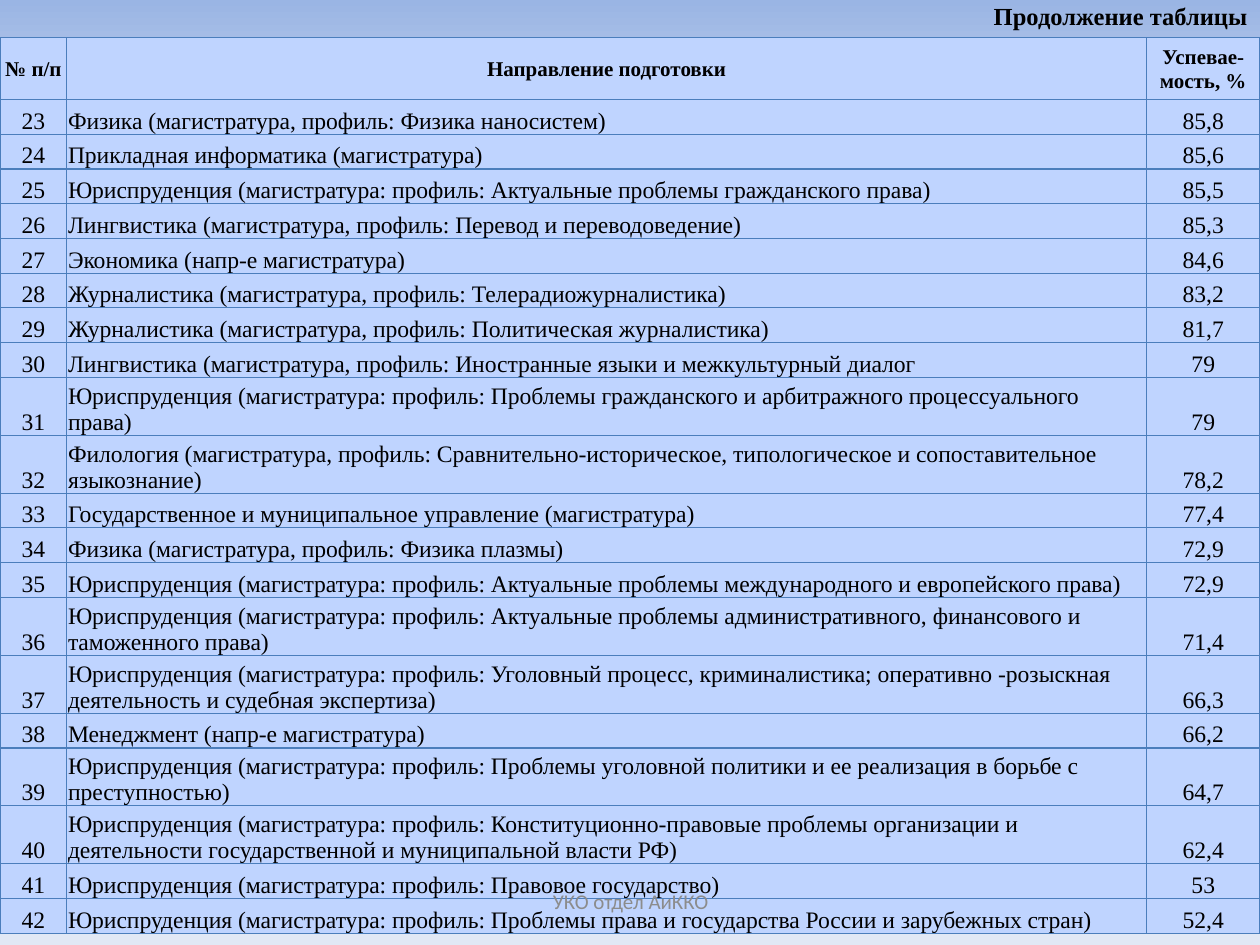
import copy

import lxml.etree
import pptx
import pptx.dml.color
import pptx.enum.text
import pptx.oxml.ns
import pptx.util

Inches = pptx.util.Inches
Pt = pptx.util.Pt
RGBColor = pptx.dml.color.RGBColor
Align = pptx.enum.text.PP_ALIGN
Anchor = pptx.enum.text.MSO_ANCHOR
qn = pptx.oxml.ns.qn

BLACK = RGBColor(0x00, 0x00, 0x00)
GREY = RGBColor(0x8C, 0x8C, 0x8C)
CELL_FILL = RGBColor(0xBF, 0xD4, 0xFF)
BORDER = RGBColor(0x4B, 0x7E, 0xBC)
BACKGROUND_STOPS = [
    (0, RGBColor(0x9A, 0xB5, 0xE4)),
    (0.13, RGBColor(0xC2, 0xD1, 0xED)),
    (1, RGBColor(0xE1, 0xE8, 0xF5)),
]

TITLE = {"name": "Times New Roman", "size": Pt(14), "bold": True}
HEADER = {"name": "Times New Roman", "size": Pt(12), "bold": True}
BODY = {"name": "Times New Roman", "size": Pt(13.5), "bold": False}
FOOTER = {"name": "Calibri", "size": Pt(12), "bold": False}

HEADINGS = ("№ п/п", "Направление подготовки", "Успевае-мость, %")
FIRST_NUMBER = 23
PROGRAMMES = [
    ("Физика (магистратура, профиль: Физика наносистем)", "85,8"),
    ("Прикладная информатика (магистратура)", "85,6"),
    ("Юриспруденция (магистратура: профиль: Актуальные проблемы гражданского права)", "85,5"),
    ("Лингвистика (магистратура, профиль: Перевод и переводоведение)", "85,3"),
    ("Экономика (напр-е магистратура)", "84,6"),
    ("Журналистика (магистратура, профиль: Телерадиожурналистика)", "83,2"),
    ("Журналистика (магистратура, профиль: Политическая журналистика)", "81,7"),
    ("Лингвистика (магистратура, профиль: Иностранные языки и межкультурный диалог", "79"),
    ("Юриспруденция (магистратура: профиль: Проблемы гражданского и арбитражного "
     "процессуального права)", "79"),
    ("Филология (магистратура, профиль: Сравнительно-историческое, типологическое и "
     "сопоставительное языкознание)", "78,2"),
    ("Государственное и муниципальное управление (магистратура)", "77,4"),
    ("Физика (магистратура, профиль: Физика плазмы)", "72,9"),
    ("Юриспруденция (магистратура: профиль: Актуальные проблемы международного и "
     "европейского права)", "72,9"),
    ("Юриспруденция (магистратура: профиль: Актуальные проблемы административного, "
     "финансового и таможенного права)", "71,4"),
    ("Юриспруденция (магистратура: профиль: Уголовный процесс, криминалистика; "
     "оперативно -розыскная деятельность и судебная экспертиза)", "66,3"),
    ("Менеджмент (напр-е магистратура)", "66,2"),
    ("Юриспруденция (магистратура: профиль: Проблемы уголовной политики и ее "
     "реализация в борьбе с преступностью)", "64,7"),
    ("Юриспруденция (магистратура: профиль: Конституционно-правовые проблемы "
     "организации и деятельности государственной и муниципальной власти РФ)", "62,4"),
    ("Юриспруденция (магистратура: профиль: Правовое государство)", "53"),
    ("Юриспруденция (магистратура: профиль: Проблемы права и государства России и "
     "зарубежных стран)", "52,4"),
]
TWO_LINE_NUMBERS = {31, 32, 36, 37, 39, 40}


def write_text(tf, text, font_format, color, alignment):
    p = tf.paragraphs[0]
    p.alignment = alignment
    r = p.add_run()
    r.text = text
    for name, value in font_format.items():
        setattr(r.font, name, value)
    r.font.color.rgb = color


def add_borders(cell):
    tc_pr = cell._tc.get_or_add_tcPr()
    for i, side in enumerate(("lnL", "lnR", "lnT", "lnB")):
        ln = lxml.etree.Element(qn(f"a:{side}"), w=str(Pt(0.75)))
        fill = lxml.etree.SubElement(ln, qn("a:solidFill"))
        lxml.etree.SubElement(fill, qn("a:srgbClr"), val=str(BORDER))
        tc_pr.insert(i, ln)  # borders must come before the cell fill


prs = pptx.Presentation()
prs.slide_width = Inches(10)
prs.slide_height = Inches(7.5)
s = prs.slides.add_slide(prs.slide_layouts[6])

# Background gradient, top to bottom
fill = s.background.fill
fill.gradient()
fill.gradient_angle = 270
stop_list = s._element.find(".//" + qn("a:gsLst"))
stop_list.append(copy.deepcopy(stop_list[-1]))
for stop, (position, color) in zip(fill.gradient_stops, BACKGROUND_STOPS):
    stop.position = position
    stop.color.rgb = color

# Title
title = s.shapes.add_textbox(Inches(0.2), Inches(-0.04), Inches(9.8), Inches(0.34))
title.text_frame.word_wrap = True
write_text(title.text_frame, "Продолжение таблицы", TITLE, BLACK, Align.RIGHT)

# Table: one-line rows share the height left by the header and two-line rows
rows = [HEADINGS] + [
    (str(number), *programme) for number, programme in enumerate(PROGRAMMES, FIRST_NUMBER)
]
table_height = Inches(7.11)
header_height = Inches(0.49)
two_line_height = Inches(0.46)
one_line_count = len(PROGRAMMES) - len(TWO_LINE_NUMBERS)
one_line_height = (
    table_height - header_height - two_line_height * len(TWO_LINE_NUMBERS)
) // one_line_count

table = s.shapes.add_table(
    len(rows), len(HEADINGS), 0, Inches(0.3), Inches(10), table_height
).table
for column, width in zip(table.columns, (0.53, 8.57, 0.9)):
    column.width = Inches(width)

for i, row in enumerate(rows):
    is_header = i == 0
    if is_header:
        height = header_height
    elif int(row[0]) in TWO_LINE_NUMBERS:
        height = two_line_height
    else:
        height = one_line_height
    table.rows[i].height = height

    cell_format = {
        "margin_left": Inches(0.01),
        "margin_right": Inches(0.01),
        "margin_top": Inches(0.01),
        "margin_bottom": 0,
        "vertical_anchor": Anchor.MIDDLE if is_header else Anchor.BOTTOM,
    }
    for j, text in enumerate(row):
        cell = table.cell(i, j)
        for name, value in cell_format.items():
            setattr(cell, name, value)
        cell.fill.solid()
        cell.fill.fore_color.rgb = CELL_FILL
        add_borders(cell)
        alignment = Align.LEFT if j == 1 and not is_header else Align.CENTER
        write_text(cell.text_frame, text, HEADER if is_header else BODY, BLACK, alignment)

# Footer
footer = s.shapes.add_textbox(Inches(3.42), Inches(6.95), Inches(3.17), Inches(0.4))
footer.text_frame.word_wrap = True
footer.text_frame.vertical_anchor = Anchor.MIDDLE
write_text(footer.text_frame, "УКО отдел АиККО", FOOTER, GREY, Align.CENTER)

prs.save("out.pptx")
